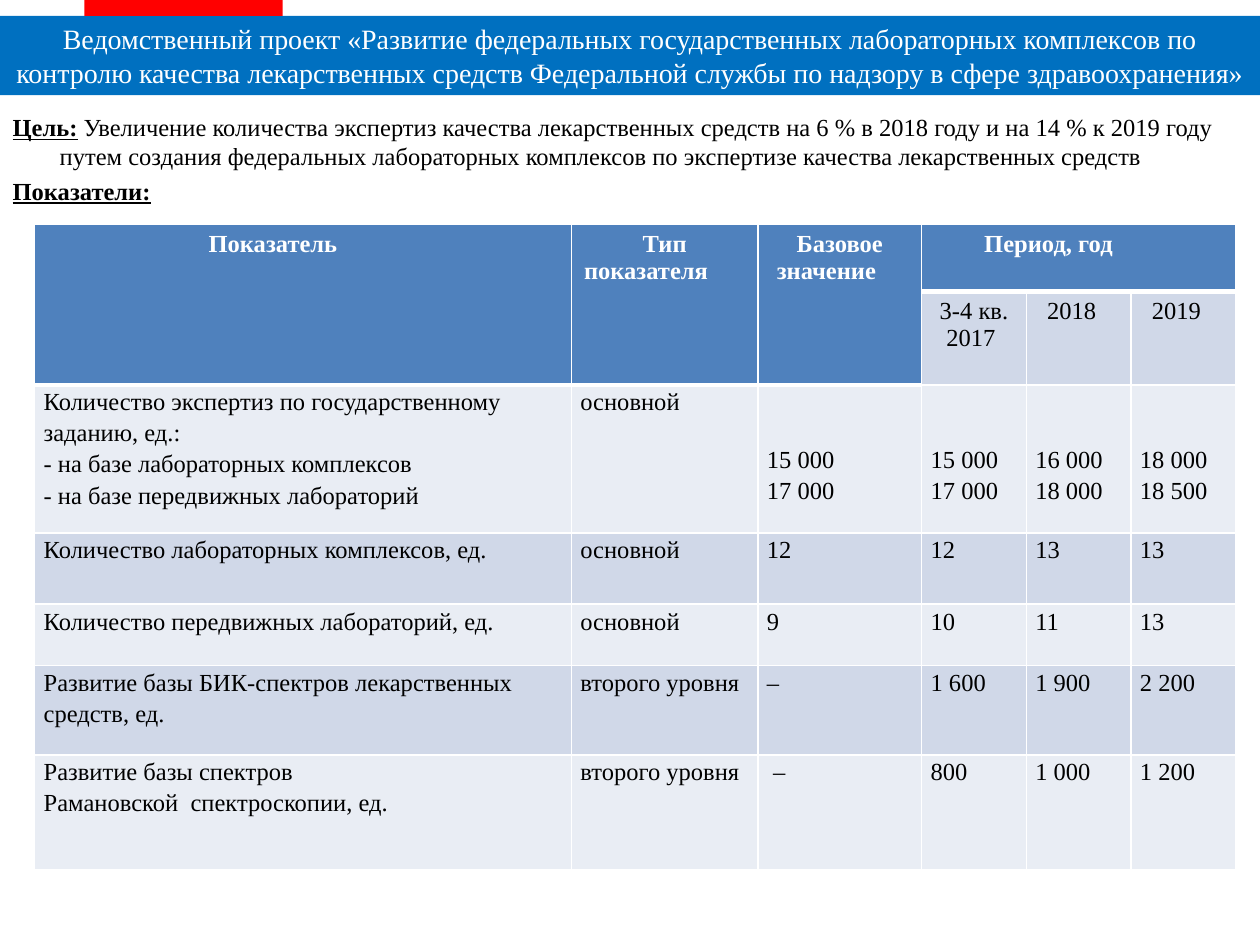
from dataclasses import dataclass

from lxml import etree
from pptx import Presentation
from pptx import util as u
from pptx.dml.color import RGBColor
from pptx.enum import shapes, text
from pptx.oxml import ns
from pptx.util import Cm


@dataclass(frozen=True)
class Theme:
    """Colours, typeface and type sizes of the deck."""
    banner: str = "0070C0"
    tab: str = "FF0000"
    header: str = "4F81BD"
    dark_band: str = "D0D8E8"
    light_band: str = "E9EDF4"
    white: str = "FFFFFF"
    black: str = "000000"
    face: str = "Times New Roman"
    title_size: int = 16
    text_size: int = 14
    thin: int = 1
    thick: int = 3


THEME = Theme()
GOAL = [
    [("Цель:", True, True), (" ", True, False),
     ("Увеличение количества экспертиз качества лекарственных средств на 6 % в 2018 году "
      "и на 14 % к 2019 году путем создания федеральных лабораторных комплексов "
      "по экспертизе качества лекарственных средств", False, False)],
    [("Показатели:", True, True)],
]
HEADINGS = ["Показатель \t", "Тип показателя \t", "Базовое значение \t", "Период, год \t"]
PERIODS = ["3-4 кв. 2017 ", "2018 \t", "2019 \t"]
INDICATORS = [
    ["Количество экспертиз по государственному заданию, ед.:\n"
     "- на базе лабораторных комплексов\n- на базе передвижных лабораторий",
     "основной", "15 000\n17 000", "15 000\n17 000", "16 000\n18 000", "18 000\n18 500"],
    ["Количество лабораторных комплексов, ед.", "основной", "12", "12", "13", "13"],
    ["Количество передвижных лабораторий, ед.", "основной", "9", "10", "11", "13"],
    ["Развитие базы БИК-спектров лекарственных средств, ед.", "второго уровня", "–",
     "1 600", "1 900", "2 200"],
    ["Развитие базы спектров \vРамановской  спектроскопии, ед.", "второго уровня", " –",
     "800", "1 000", "1 200"],
]
COLUMN_WIDTHS = [10.82, 3.76, 3.3, 2.11, 2.11, 2.11]
ROW_HEIGHTS = [1.36, 1.88, 2.98, 1.44, 1.24, 1.8, 2.31]


def apply(target, values):
    """Set every attribute named in a dict of format values."""
    for name, value in values.items():
        setattr(target, name, value)


def place(shape, box):
    """Move a shape to a box of left, top, width and height in centimetres."""
    apply(shape, dict(zip(("left", "top", "width", "height"), map(Cm, box))))


def paint(target, colour):
    """Give a shape or cell a solid fill."""
    target.fill.solid()
    target.fill.fore_color.rgb = RGBColor.from_string(colour)


def style(span, colour, size=THEME.text_size, bold=False, underline=False):
    """Format one run of text."""
    apply(span.font, {"name": THEME.face, "size": u.Pt(size), "bold": bold,
                      "underline": underline})
    span.font.color.rgb = RGBColor.from_string(colour)


def border(cell, bottom):
    """Draw white edges round a cell with the given bottom width."""
    properties = cell._tc.get_or_add_tcPr()
    for place_in_order, side in enumerate("LRTB"):
        width = bottom if side == "B" else THEME.thin
        line = etree.Element(ns.qn(f"a:ln{side}"), w=str(u.Pt(width)))
        fill = etree.SubElement(line, ns.qn("a:solidFill"))
        etree.SubElement(fill, ns.qn("a:srgbClr"), val=THEME.white)
        properties.insert(place_in_order, line)


def fill_cell(cell, words, fill, colour=THEME.black, bold=False, **layout):
    """Write and format the text of a cell."""
    cell.text_frame.text = words
    for para in cell.text_frame.paragraphs:
        apply(para, layout)
        for span in para.runs:
            style(span, colour, bold=bold)
    paint(cell, fill)


def add_banner(page, box):
    """Turn the title placeholder into a banner with a red tab above it."""
    title = page.shapes.title
    place(title, box)
    paint(title, THEME.banner)
    apply(title.text_frame, {"word_wrap": True, "auto_size": text.MSO_AUTO_SIZE.NONE,
                             "vertical_anchor": text.MSO_ANCHOR.MIDDLE})
    title.text_frame.text = (
        "Ведомственный проект «Развитие федеральных государственных лабораторных комплексов по "
        "контролю качества лекарственных средств Федеральной службы по надзору "
        "в сфере здравоохранения»")
    para = title.text_frame.paragraphs[0]
    para.alignment = text.PP_ALIGN.CENTER
    style(para.runs[0], THEME.white, THEME.title_size)
    left, top = box[:2]
    tab = page.shapes.add_shape(shapes.MSO_SHAPE.RECTANGLE, 0, 0, 0, 0)
    place(tab, (left + 1.7, 0, 4, top))
    paint(tab, THEME.tab)
    tab.line.fill.background()
    tab.shadow.inherit = False


def add_goal(page, box):
    """Fill the body placeholder with the goal and the table heading."""
    body = page.placeholders[1]
    place(body, box)
    frame = body.text_frame
    apply(frame, {"word_wrap": True, "auto_size": text.MSO_AUTO_SIZE.NONE})
    for index, spans in enumerate(GOAL):
        para = frame.paragraphs[0] if index == 0 else frame.add_paragraph()
        properties = para._p.get_or_add_pPr()
        properties.set("marL", str(Cm(0.95)))
        properties.set("indent", str(Cm(-0.95)))
        etree.SubElement(properties, ns.qn("a:buNone"))
        for words, bold, underline in spans:
            span = para.add_run()
            span.text = words
            style(span, THEME.black, bold=bold, underline=underline)


def add_indicators(page, box):
    """Build the table of indicators with a two-row header."""
    table = page.shapes.add_table(len(ROW_HEIGHTS), len(COLUMN_WIDTHS), *map(Cm, box)).table
    for column, width in zip(table.columns, COLUMN_WIDTHS):
        column.width = Cm(width)
    for row, height in zip(table.rows, ROW_HEIGHTS):
        row.height = Cm(height)
    centre = text.PP_ALIGN.CENTER
    for column, words in enumerate(HEADINGS):
        cell = table.cell(0, column)
        cell.merge(table.cell(1, column) if column < 3 else table.cell(0, 5))
        fill_cell(cell, words, THEME.header, THEME.white, True, alignment=centre)
    for column, words in enumerate(PERIODS, 3):
        fill_cell(table.cell(1, column), words, THEME.dark_band, alignment=centre)
    for row, values in enumerate(INDICATORS, 2):
        band = THEME.dark_band if row % 2 else THEME.light_band
        for column, words in enumerate(values):
            cell = table.cell(row, column)
            fill_cell(cell, words, band, line_spacing=1.15)
            lowered = row == 2 and column > 1
            apply(cell, {"margin_left": Cm(0.18), "margin_right": Cm(0.18),
                         "margin_top": Cm(1.17 if lowered else 0), "margin_bottom": 0})
    for row in range(len(ROW_HEIGHTS)):
        for column in range(len(COLUMN_WIDTHS)):
            under_header = row == 0 or (row == 1 and column < 3)
            border(table.cell(row, column), THEME.thick if under_header else THEME.thin)


def main():
    """Build the deck and save it."""
    deck = Presentation()
    apply(deck, {"slide_width": Cm(25.4), "slide_height": Cm(19.05)})
    page = deck.slides.add_slide(deck.slide_layouts[1])
    add_banner(page, (0, 0.32, 25.4, 1.6))
    add_goal(page, (0, 2.13, 25.1, 12.57))
    add_indicators(page, (0.7, 4.52, sum(COLUMN_WIDTHS), sum(ROW_HEIGHTS)))
    deck.save("out.pptx")


if __name__ == "__main__":
    main()
